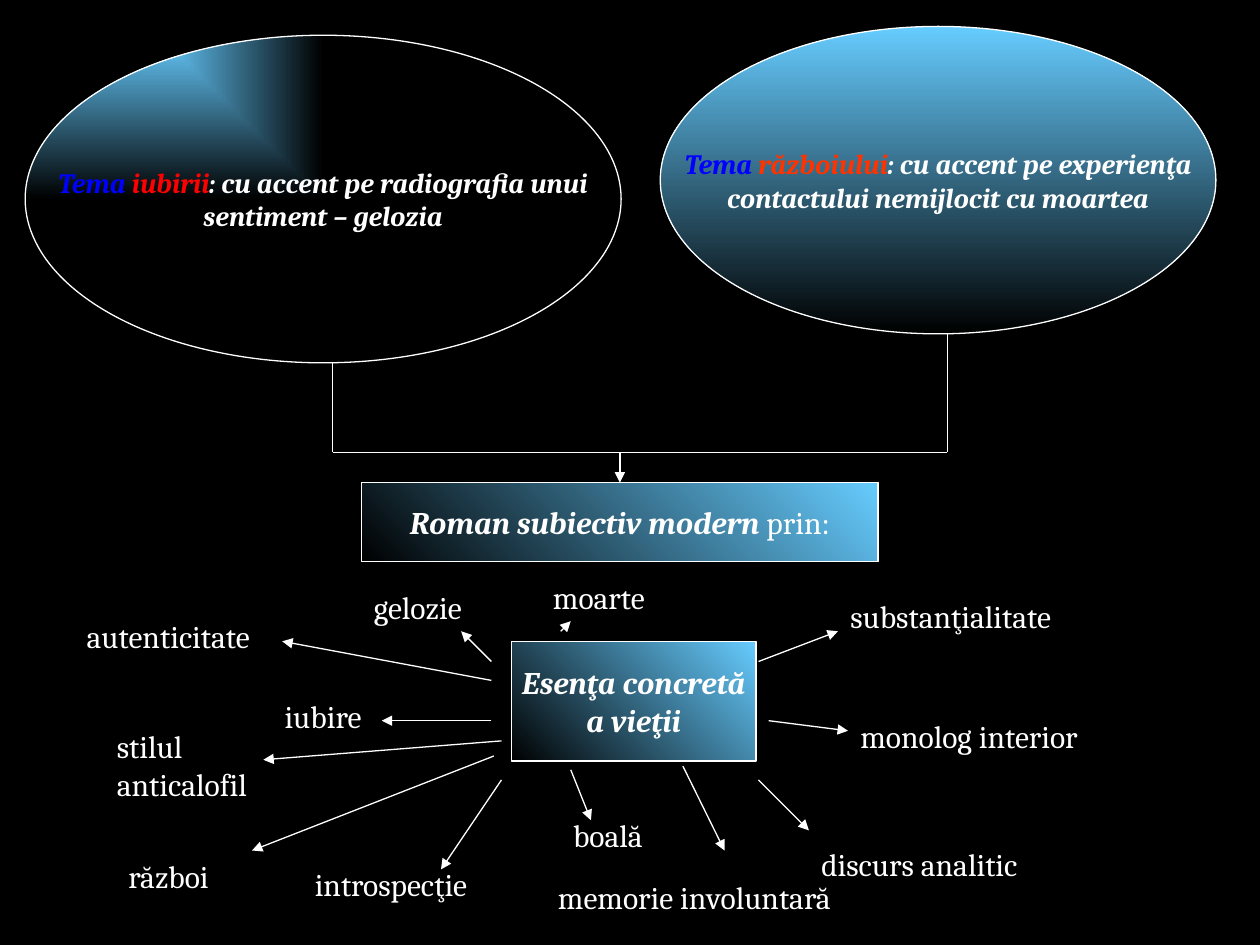
from dataclasses import dataclass

from lxml import etree
from pptx import Presentation
from pptx import util as u
from pptx.dml.color import RGBColor
from pptx.enum import shapes, text
from pptx.oxml import ns


@dataclass(frozen=True)
class Theme:
    font: str = "Cambria"
    back: str = "000000"
    ink: str = "FFFFFF"
    glow: str = "66CCFF"
    lead: str = "0000FF"
    love: str = "FF0000"
    war: str = "FF3300"
    small: int = 16
    normal: int = 18
    stroke: float = 0.75


class Board:
    """Draws on a slide with a grid of 100 columns by 75 rows."""
    COLUMNS, ROWS = 100, 75

    def __init__(self, presentation, theme):
        self.theme = theme
        self.cell_width = presentation.slide_width / self.COLUMNS
        self.cell_height = presentation.slide_height / self.ROWS
        self.slide = presentation.slides.add_slide(presentation.slide_layouts[6])
        fill = self.slide.background.fill
        fill.solid()
        fill.fore_color.rgb = RGBColor.from_string(theme.back)

    def place(self, *cells):
        sizes = (self.cell_width, self.cell_height) * 2
        return [u.Emu(round(cell * size)) for cell, size in zip(cells, sizes)]

    def outline(self, line):
        line.color.rgb = RGBColor.from_string(self.theme.ink)
        line.width = u.Pt(self.theme.stroke)

    def add_words(self, frame, paragraphs, size, align):
        """Each paragraph is a list of (words, colour, strong) runs."""
        for index, runs in enumerate(paragraphs):
            paragraph = frame.add_paragraph() if index else frame.paragraphs[0]
            paragraph.alignment = align
            for words, colour, strong in runs:
                run = paragraph.add_run()
                run.text = words
                run.font.name = self.theme.font
                run.font.size = u.Pt(size)
                run.font.bold = run.font.italic = strong
                run.font.color.rgb = RGBColor.from_string(colour)

    def panel(self, kind, cells, paragraphs, size, colours, angle=None):
        """A gradient shape; without an angle it spreads from the top left corner."""
        shape = self.slide.shapes.add_shape(kind, *self.place(*cells))
        shape.shadow.inherit = False
        shape.fill.gradient()
        for stop, colour, position in zip(shape.fill.gradient_stops, colours, (0, 1)):
            stop.color.rgb = RGBColor.from_string(colour)
            stop.position = position
        if angle is None:
            linear = shape._element.spPr.find(".//" + ns.qn("a:lin"))
            gradient = linear.getparent()
            gradient.remove(linear)
            spread = etree.SubElement(gradient, ns.qn("a:path"), {"path": "rect"})
            etree.SubElement(spread, ns.qn("a:fillToRect"), r="100000", b="100000")
        else:
            shape.fill.gradient_angle = angle
        self.outline(shape.line)
        frame = shape.text_frame
        frame.word_wrap = False
        frame.vertical_anchor = text.MSO_ANCHOR.MIDDLE
        self.add_words(frame, paragraphs, size, text.PP_ALIGN.CENTER)

    def label(self, words, *cells):
        frame = self.slide.shapes.add_textbox(*self.place(*cells)).text_frame
        frame.word_wrap = True
        self.add_words(frame, [[(words, self.theme.ink, False)]],
                       self.theme.normal, text.PP_ALIGN.LEFT)

    def line(self, *cells, arrow=False):
        connector = self.slide.shapes.add_connector(
            shapes.MSO_CONNECTOR.STRAIGHT, *self.place(*cells))
        self.outline(connector.line)
        properties = connector._element.spPr
        if arrow:
            etree.SubElement(properties.find(ns.qn("a:ln")),
                             ns.qn("a:tailEnd"), type="triangle")
        etree.SubElement(properties, ns.qn("a:effectLst"))


def main():
    presentation = Presentation()
    presentation.slide_width, presentation.slide_height = u.Inches(10), u.Inches(7.5)
    theme = Theme()
    board = Board(presentation, theme)
    ellipse, rectangle = shapes.MSO_SHAPE.OVAL, shapes.MSO_SHAPE.RECTANGLE
    falling, rising = (theme.glow, theme.back), (theme.back, theme.glow)

    # The two themes of the novel
    themes = [
        ((2, 2.8, 47.3, 26), "iubirii", theme.love, ": cu accent pe radiografia unui",
         "sentiment – gelozia", None),
        ((52.4, 2.1, 44.1, 24.4), "războiului", theme.war, ": cu accent pe experienţa",
         "contactului nemijlocit cu moartea", 270),
    ]
    for cells, topic, colour, first, second, angle in themes:
        paragraphs = [
            [("Tema ", theme.lead, True), (topic, colour, True), (first, theme.ink, True)],
            [(second, theme.ink, True)],
        ]
        board.panel(ellipse, cells, paragraphs, theme.small, falling, angle)

    # Bracket that joins both themes
    left, right, middle, level = 26.4, 75.2, 49.2, 35.9
    board.line(left, 28.8, left, level)
    board.line(right, 26.5, right, level)
    board.line(left, level, right, level)
    board.line(middle, level, middle, 38.3, arrow=True)

    # Kind of novel and its core
    boxes = [
        ((28.7, 38.3, 41, 6.3), [[("Roman subiectiv modern", theme.ink, True),
                                  (" prin:", theme.ink, False)]]),
        ((40.6, 50.9, 19.4, 9.5), [[("Esenţa concretă", theme.ink, True)],
                                   [("a vieţii", theme.ink, True)]]),
    ]
    for cells, paragraphs in boxes:
        board.panel(rectangle, cells, paragraphs, theme.normal, rising, 45)

    # Features around the core: words, label (left, top, width), arrow (from, to)
    features = [
        ("autenticitate", (5.9, 48.5, 15.7), (39, 54, 22.4, 50.9)),
        ("stilul anticalofil", (8.3, 57.2, 15.7), (39.8, 58.8, 20.9, 60.3)),
        ("iubire", (21.6, 54.8, 11.8), (39, 57.2, 30.3, 57.2)),
        ("introspecţie", (24, 68.2, 17.3), (39.8, 61.9, 35, 69)),
        ("gelozie", (28.7, 46.2, 11), (39, 52.5, 36.6, 50.1)),
        ("moarte", (42.9, 45.4, 13.4), (44.5, 50.1, 45.3, 49.3)),
        ("boală", (44.5, 64.3, 11.8), (45.3, 61.1, 46.9, 65.1)),
        ("substanţialitate", (66.5, 46.9, 18.9), (60.2, 52.5, 66.5, 50.1)),
        ("monolog interior", (67.3, 56.4, 25.2), (61, 57.2, 67.3, 58)),
        ("discurs analitic", (64.2, 66.6, 24.4), (60.2, 61.9, 64.2, 65.9)),
        ("memorie involuntară", (43.3, 69.2, 30.8), (54.2, 60.8, 57.5, 67.5)),
        ("război", (9.2, 67.5, 14.2), (39.2, 60, 20, 67.5)),
    ]
    for words, spot, arrow in features:
        board.label(words, *spot, 4)
        board.line(*arrow, arrow=True)

    presentation.save("out.pptx")


if __name__ == "__main__":
    main()
